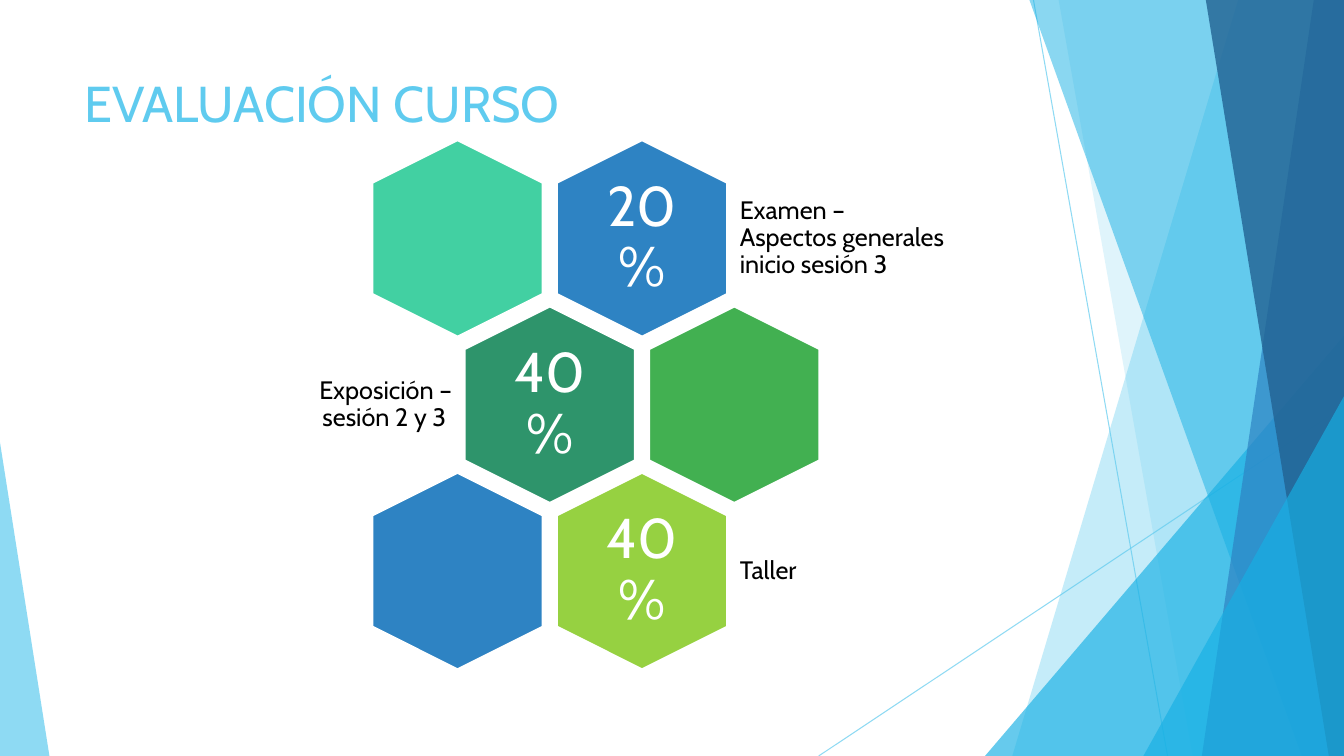
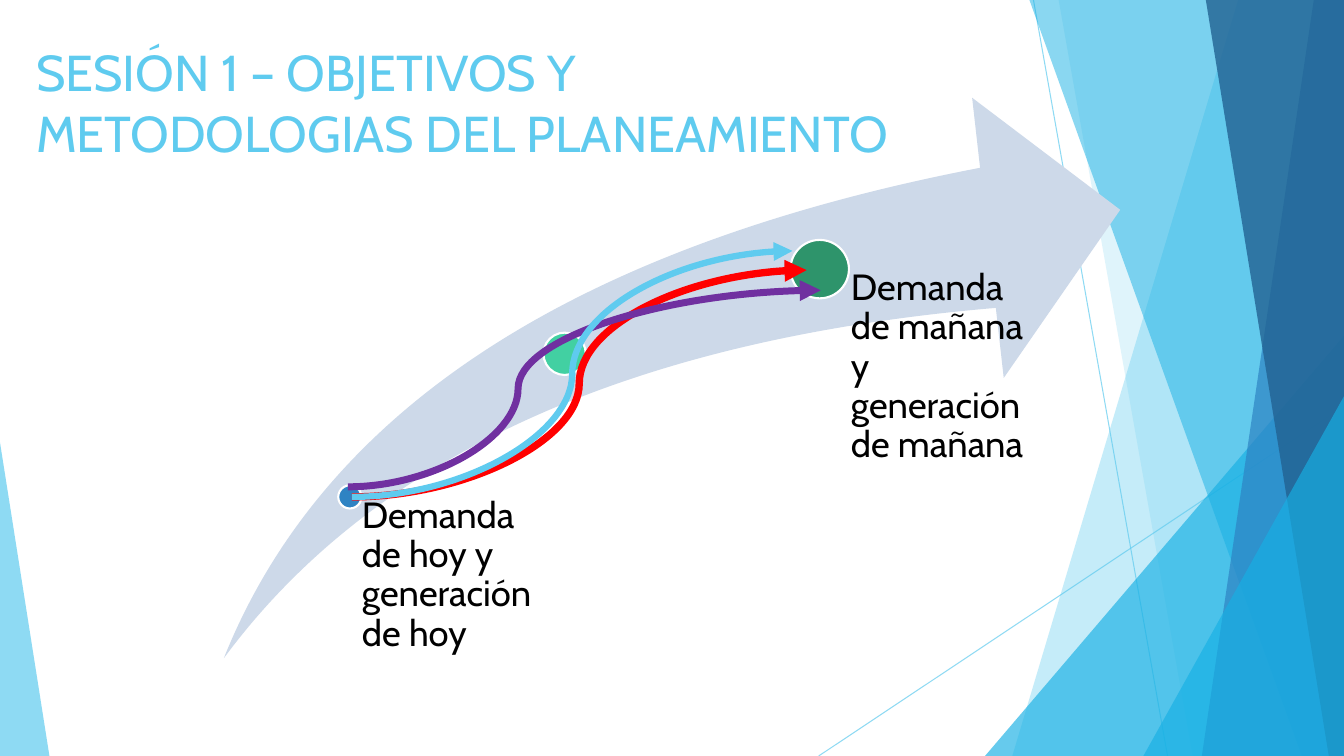
from collections import namedtuple

from lxml.etree import SubElement
from pptx import Presentation
from pptx.dml.color import RGBColor
from pptx.enum.shapes import MSO_CONNECTOR, MSO_SHAPE
from pptx.enum.text import MSO_ANCHOR, PP_ALIGN
from pptx.oxml.ns import qn
from pptx.util import Inches, Pt

WHITE = RGBColor(0xFF, 0xFF, 0xFF)
BLACK = RGBColor(0x00, 0x00, 0x00)
SKY = RGBColor(0x5F, 0xCB, 0xEF)
CYAN = RGBColor(0x17, 0xB0, 0xE4)
BLUE = RGBColor(0x2E, 0x83, 0xC3)
NAVY = RGBColor(0x22, 0x62, 0x92)
MINT = RGBColor(0x42, 0xD0, 0xA2)
TEAL = RGBColor(0x2E, 0x94, 0x6B)
GREEN = RGBColor(0x42, 0xB0, 0x51)
LIME = RGBColor(0x96, 0xD1, 0x41)
MIST = RGBColor(0xCD, 0xD9, 0xE9)
RED = RGBColor(0xFF, 0x00, 0x00)
PURPLE = RGBColor(0x70, 0x30, 0xA0)

FONT = "Cabin"
PAGE_WIDTH, PAGE_HEIGHT = 13.33, 7.5

# All lengths in a box are inches.
Box = namedtuple("Box", "left top width height")


def emu(box):
    return [Inches(length) for length in box]


def set_opacity(color_holder, percent):
    color = next(color_holder.iter(qn("a:srgbClr")))
    SubElement(color, qn("a:alpha"), val=str(percent * 1000))


def paint(shape, color, opacity=100, outlined=False):
    shape.shadow.inherit = False
    shape.fill.solid()
    shape.fill.fore_color.rgb = color
    if opacity < 100:
        set_opacity(shape._element.spPr.find(qn("a:solidFill")), opacity)
    if outlined:
        shape.line.color.rgb = WHITE
        shape.line.width = Pt(1.5)
    else:
        shape.line.fill.background()


def add_preset(page, kind, box, color, adjustments=(), **look):
    shape = page.shapes.add_shape(kind, *emu(box))
    for index, value in enumerate(adjustments):
        shape.adjustments[index] = value
    paint(shape, color, **look)
    return shape


def add_line(page, kind, start, end, color, width):
    ends = [Inches(length) for length in (*start, *end)]
    line = page.shapes.add_connector(kind, *ends)
    line.line.color.rgb = color
    line.line.width = Pt(width)
    SubElement(line._element.spPr, qn("a:effectLst"))
    return line


def add_text(page, box, text, size, color, margins, align=PP_ALIGN.LEFT,
             anchor=MSO_ANCHOR.TOP, spacing=0.9):
    """Margins run left, top, right, bottom in inches."""
    frame = page.shapes.add_textbox(*emu(box)).text_frame
    frame.word_wrap = True
    frame.vertical_anchor = anchor
    (frame.margin_left, frame.margin_top,
     frame.margin_right, frame.margin_bottom) = emu(margins)
    para = frame.paragraphs[0]
    para.text = text
    para.alignment = align
    para.line_spacing = spacing
    para.font.name = FONT
    para.font.size = Pt(size)
    para.font.color.rgb = color


def add_pane(page, top_left, bottom_left, color, opacity):
    """Full-height pane with a slanted left edge, reaching the right of the page."""
    corners = [(top_left, 0), (PAGE_WIDTH, 0),
               (PAGE_WIDTH, PAGE_HEIGHT), (bottom_left, PAGE_HEIGHT)]
    points = [(Inches(x), Inches(y)) for x, y in corners]
    builder = page.shapes.build_freeform(*points[0])
    builder.add_line_segments(points[1:], close=True)
    paint(builder.convert_to_shape(), color, opacity)


def add_wedge(page, left, width, height, apex, color, opacity):
    """Triangle standing on the bottom edge of the page."""
    box = Box(left, PAGE_HEIGHT - height, width, height)
    add_preset(page, MSO_SHAPE.ISOSCELES_TRIANGLE, box, color, [apex],
               opacity=opacity)


def add_facets(page):
    for start, end in (((10.25, 0), (11.58, PAGE_HEIGHT)),
                       ((PAGE_WIDTH, 4.03), (8.12, PAGE_HEIGHT))):
        line = add_line(page, MSO_CONNECTOR.STRAIGHT, start, end, SKY, 0.75)
        set_opacity(line._element.spPr, 70)
    add_pane(page, 12.28, 10.04, SKY, 36)
    add_pane(page, 10.5, 11.83, SKY, 20)
    add_wedge(page, 9.77, 3.56, 4.17, 1, CYAN, 66)
    add_pane(page, 10.21, 12.91, CYAN, 50)
    add_pane(page, 13.03, 11.92, BLUE, 70)
    add_pane(page, 11.96, 13.18, NAVY, 80)
    add_wedge(page, 11.34, 1.99, 3.57, 1, CYAN, 66)
    add_wedge(page, 0, 0.49, 3.11, 0, SKY, 70)


def add_page(deck, title, left, top):
    """Blank page with the shared background and title style."""
    page = deck.slides.add_slide(deck.slide_layouts[6])
    add_facets(page)
    add_text(page, Box(left, top, 9.4, 1.44), title, 36, SKY,
             (0.1, 0.05, 0.1, 0.05), spacing=1)
    return page


HEXAGON_WIDTH, HEXAGON_HEIGHT = 1.69, 1.95
COLUMN_PITCH, ROW_PITCH = 1.83, 1.65
LABEL_OFFSET, LABEL_WIDTH, LABEL_HEIGHT = 0.9, 2.17, 1.17

# Row, column, colour, share, label, side of the label
HEXAGONS = [
    (0, 1, BLUE, "20%", "Examen – Aspectos generales inicio sesión 3", "right"),
    (0, 0, MINT, None, None, None),
    (1, 0, TEAL, "40%", "Exposición – sesión 2 y 3 ", "left"),
    (1, 1, GREEN, None, None, None),
    (2, 1, LIME, "40%", "Taller", "right"),
    (2, 0, BLUE, None, None, None),
]


def centred(x, y, width, height):
    return Box(x - width / 2, y - height / 2, width, height)


def add_hexagon(page, x, y, color, share, label, side):
    """Pointed-top hexagon centred on x, y, with its share and side label."""
    hexagon = add_preset(page, MSO_SHAPE.HEXAGON,
                         centred(x, y, HEXAGON_HEIGHT, HEXAGON_WIDTH), color,
                         [0.25], outlined=True)
    hexagon.rotation = 90
    if share is None:
        return
    add_text(page, centred(x, y, 1.17, 1.34), share, 40, WHITE, [0.17] * 4,
             PP_ALIGN.CENTER, MSO_ANCHOR.MIDDLE)
    if side == "right":
        left, align = x + LABEL_OFFSET, PP_ALIGN.LEFT
    else:
        left, align = x - LABEL_OFFSET - LABEL_WIDTH, PP_ALIGN.RIGHT
    add_text(page, Box(left, y - LABEL_HEIGHT / 2, LABEL_WIDTH, LABEL_HEIGHT),
             label, 18, BLACK, [0.07] * 4, align, MSO_ANCHOR.MIDDLE)


def add_honeycomb(page, box):
    first_x = box.left + (box.width - 1.5 * COLUMN_PITCH) / 2
    first_y = box.top + HEXAGON_HEIGHT / 2
    for row, column, *content in HEXAGONS:
        shift = COLUMN_PITCH / 2 if row % 2 else 0
        add_hexagon(page, first_x + column * COLUMN_PITCH + shift,
                    first_y + row * ROW_PITCH, *content)


# Centre x, centre y, diameter, colour, label, label width, label indent
MILESTONES = [
    (1.25, 3.96, 0.23, BLUE, "Demanda de hoy y generación de hoy", 2.07, 0.12),
    (3.38, 2.54, 0.42, MINT, None, 0, 0),
    (5.91, 1.7, 0.58, TEAL, "Demanda de mañana y generación de mañana",
     2.13, 0.31),
]

# Start, end, colour, width, position of the bend
ROUTES = [
    ((1.27, 3.96), (5.78, 1.71), RED, 5.25, 0.5),
    ((1.23, 3.86), (5.92, 1.91), PURPLE, 5, 0.36),
    ((1.27, 3.96), (5.64, 1.52), SKY, 4.5, 0.5),
]


def add_route(page, start, end, color, width, bend):
    """Curved arrow that turns at the given share of its width."""
    route = add_line(page, MSO_CONNECTOR.CURVE, start, end, color, width)
    SubElement(route.line._get_or_add_ln(), qn("a:tailEnd"), type="triangle")
    guides = next(route._element.iter(qn("a:avLst")))
    SubElement(guides, qn("a:gd"), name="adj1",
               fmla=f"val {round(bend * 100000)}")


def add_growth_arrow(page, box):
    add_preset(page, MSO_SHAPE.SWOOSH_ARROW, box, MIST, [0.25, 0.25])
    for x, y, diameter, color, label, width, indent in MILESTONES:
        add_preset(page, MSO_SHAPE.OVAL,
                   centred(box.left + x, box.top + y, diameter, diameter),
                   color, outlined=True)
        if label:
            add_text(page, Box(box.left + x, box.top + y, width, box.height - y),
                     label, 26, BLACK, (indent, 0, 0, 0))
    for start, end, *look in ROUTES:
        add_route(page, (box.left + start[0], box.top + start[1]),
                  (box.left + end[0], box.top + end[1]), *look)


def main():
    deck = Presentation()
    deck.slide_width = Inches(PAGE_WIDTH)
    deck.slide_height = Inches(PAGE_HEIGHT)

    grading = add_page(deck, "EVALUACIÓN CURSO", 0.74, 0.67)
    add_honeycomb(grading, Box(2.42, 1.39, 6.98, 5.25))

    planning = add_page(
        deck, "SESIÓN 1 – OBJETIVOS Y METODOLOGIAS DEL PLANEAMIENTO", 0.26, 0.36)
    add_growth_arrow(planning, Box(2.22, 0.97, 8.89, 5.56))

    deck.save("out.pptx")


if __name__ == "__main__":
    main()
